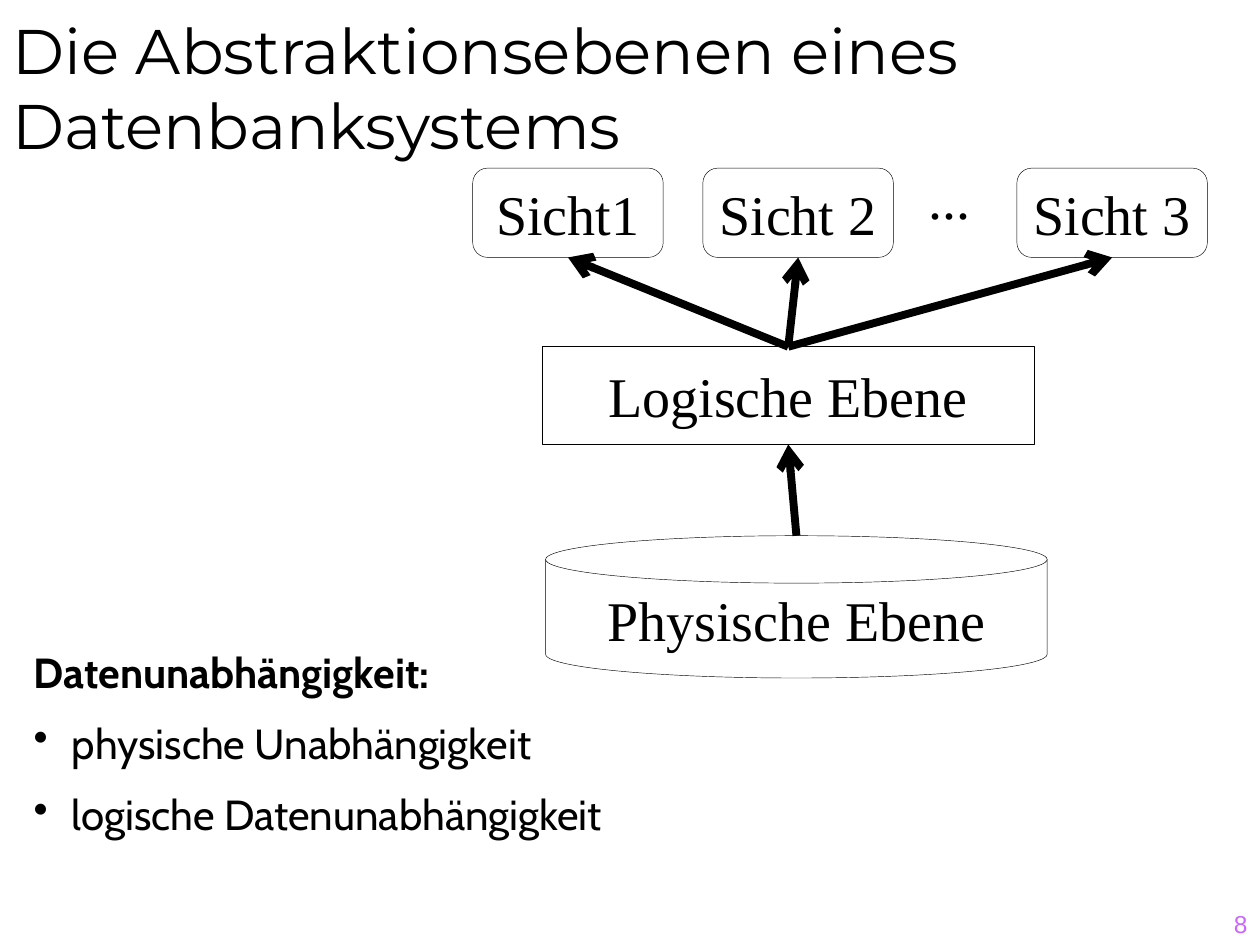
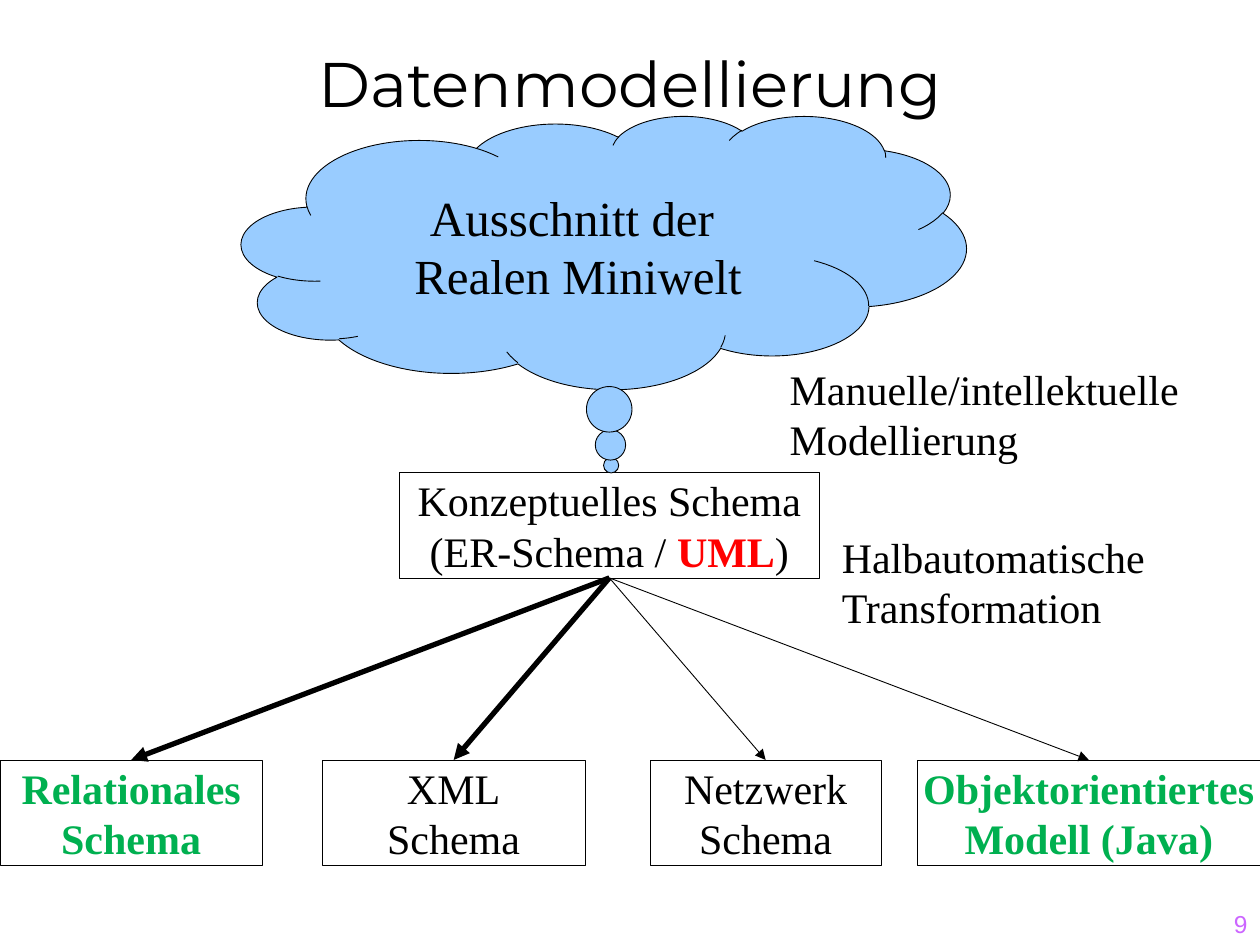
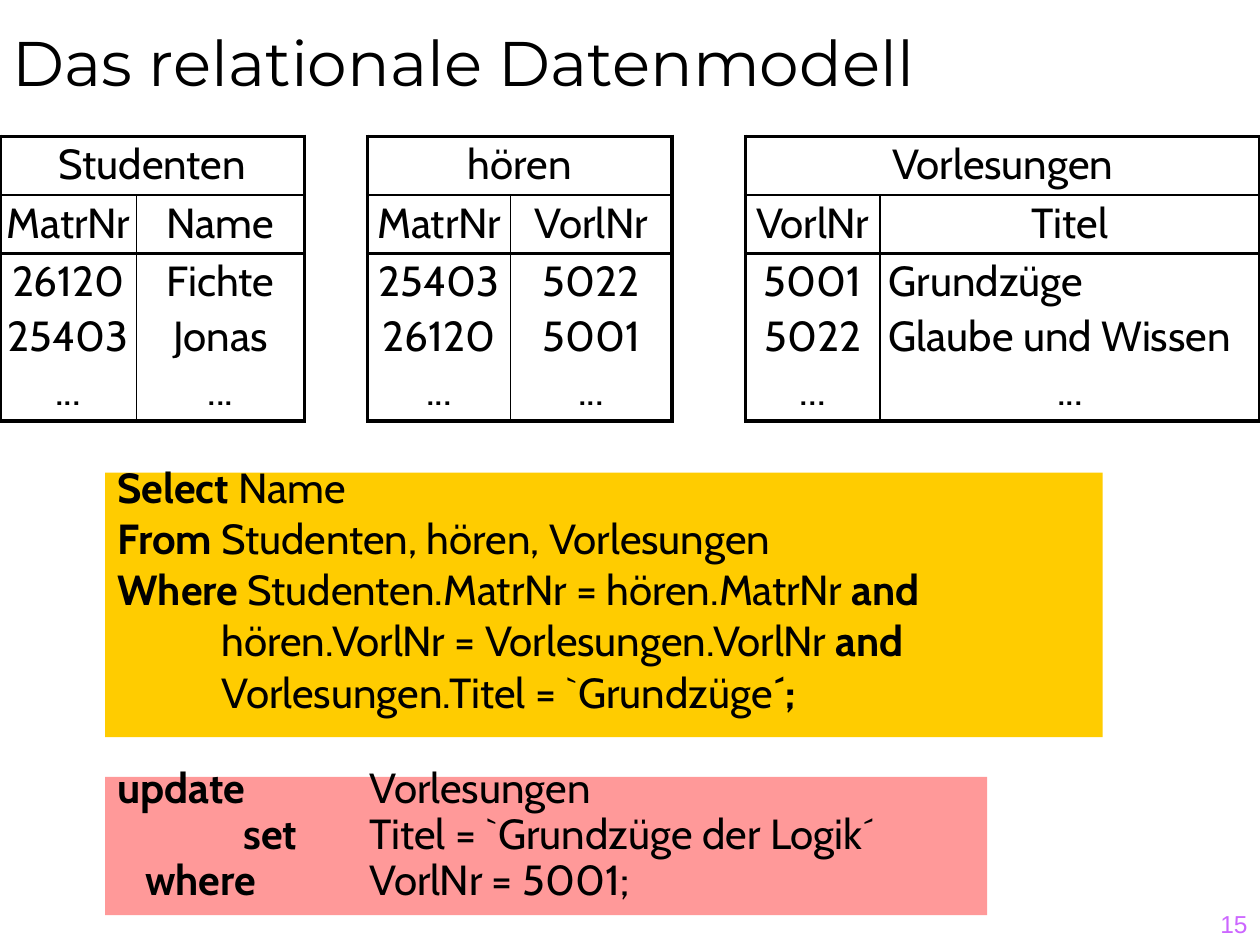
from lxml.etree import SubElement
from pptx import Presentation
from pptx.dml.color import RGBColor
from pptx.enum.shapes import MSO_CONNECTOR, MSO_SHAPE
from pptx.enum.text import MSO_ANCHOR, PP_ALIGN
from pptx.oxml.ns import qn
from pptx.util import Cm, Pt

COLORS = {
    "text": "000000",
    "page_number": "CC66FF",
    "highlight": "FF0000",
    "covered": "00B050",
    "cloud": "99CCFF",
    "query": "FFCC00",
    "update": "FF9999",
}
TITLE_FONT, BODY_FONT, DIAGRAM_FONT, NUMBER_FONT = "Montserrat", "Cabin", "Times New Roman", "Arial"
ALIGNMENTS = {"l": PP_ALIGN.LEFT, "c": PP_ALIGN.CENTER, "r": PP_ALIGN.RIGHT}
SLIDE_WIDTH, SLIDE_HEIGHT = 25.4, 19.05
THIN, THICK = 1, 2.25
ROW_HEIGHTS = (1.18, 1.18, 3.38)
BULLET_INDENT = 0.77


def color_of(name):
    """Return the named colour."""
    return RGBColor.from_string(COLORS[name])


def add_bullet(paragraph):
    """Give a paragraph a hanging bullet."""
    properties = paragraph._p.get_or_add_pPr()
    properties.set("marL", str(Cm(BULLET_INDENT)))
    properties.set("indent", str(-Cm(BULLET_INDENT)))
    SubElement(properties, qn("a:buChar"), char="•")


def add_tab_stops(paragraph, stops):
    """Add left tab stops at the given distances."""
    tab_list = SubElement(paragraph._p.get_or_add_pPr(), qn("a:tabLst"))
    for stop in stops:
        SubElement(tab_list, qn("a:tab"), pos=str(Cm(stop)), algn="l")


def write_text(frame, text, font=DIAGRAM_FONT, size=24, color="text", accent="text", align="l",
               anchor=MSO_ANCHOR.TOP, wrap=True, space_before=0, line_spacing=None,
               tabs=(), bullets_from=None):
    """Fill a frame; ** toggles bold accent, align has a letter per paragraph, the last repeating."""
    frame.word_wrap = wrap
    frame.vertical_anchor = anchor
    for index, line in enumerate(text.split("\n")):
        paragraph = frame.add_paragraph() if index else frame.paragraphs[0]
        paragraph.alignment = ALIGNMENTS[align[min(index, len(align) - 1)]]
        paragraph.space_before = Pt(space_before)
        if line_spacing:
            paragraph.line_spacing = line_spacing
        if bullets_from is not None and index >= bullets_from:
            add_bullet(paragraph)
        if index < len(tabs) and tabs[index]:
            add_tab_stops(paragraph, tabs[index])
        for position, part in enumerate(line.split("**")):
            if part:
                bold = position % 2 == 1
                run = paragraph.add_run()
                run.text = part
                run.font.name = font
                run.font.size = Pt(size)
                run.font.bold = bold
                run.font.color.rgb = color_of(accent if bold else color)


def add_text(slide, box, text, **text_format):
    """Add a text box at left, top, width, height."""
    text_box = slide.shapes.add_textbox(*map(Cm, box))
    write_text(text_box.text_frame, text, **text_format)


def add_box(slide, kind, box, text, fill=None, line_width=0.25, **text_format):
    """Add a preset shape with text and return it."""
    shape = slide.shapes.add_shape(kind, *map(Cm, box))
    shape.shadow.inherit = False
    if fill:
        shape.fill.solid()
        shape.fill.fore_color.rgb = color_of(fill)
    else:
        shape.fill.background()
    if line_width:
        shape.line.width = Pt(line_width)
        shape.line.color.rgb = color_of("text")
    else:
        shape.line.fill.background()
    write_text(shape.text_frame, text, **text_format)
    return shape


def add_node(slide, kind, box, text, **options):
    """Add an outlined diagram node with centred text and return it."""
    options = {"align": "c", "anchor": MSO_ANCHOR.MIDDLE, "wrap": False} | options
    return add_box(slide, kind, box, text, **options)


def add_arrow(slide, start, end, width, head):
    """Draw an arrow between two points."""
    connector = slide.shapes.add_connector(MSO_CONNECTOR.STRAIGHT, *start, *end)
    connector.line.width = Pt(width)
    connector.line.color.rgb = color_of("text")
    SubElement(connector.line._get_or_add_ln(), qn("a:tailEnd"), type=head)
    SubElement(connector._element.spPr, qn("a:effectLst"))


def top_of(shape):
    """Return the middle of the top edge."""
    return shape.left + shape.width // 2, shape.top


def bottom_of(shape):
    """Return the middle of the bottom edge."""
    return shape.left + shape.width // 2, shape.top + shape.height


def set_borders(cell, **widths):
    """Set the left, right, top and bottom border widths in points."""
    properties = cell._tc.get_or_add_tcPr()
    for side in ("L", "R", "T", "B"):
        line = SubElement(properties, qn(f"a:ln{side}"), w=str(Pt(widths[side])))
        fill = SubElement(line, qn("a:solidFill"))
        SubElement(fill, qn("a:srgbClr"), val=COLORS["text"])


def add_relation(slide, left, column_widths, name, attributes, values, last_align="c"):
    """Add a table with a relation's name, attributes and values."""
    table = slide.shapes.add_table(3, 2, Cm(left), Cm(2.75), Cm(sum(column_widths)),
                                   Cm(sum(ROW_HEIGHTS))).table
    table.first_row = table.horz_banding = False
    for column, width in zip(table.columns, column_widths):
        column.width = Cm(width)
    for row, height in zip(table.rows, ROW_HEIGHTS):
        row.height = Cm(height)
    table.cell(0, 0).merge(table.cell(0, 1))
    for row, texts in enumerate(((name, ""), attributes, values)):
        for column, text in enumerate(texts):
            cell = table.cell(row, column)
            side_margin = 0.18 if row == 2 and column == 1 else 0
            cell.margin_left = cell.margin_right = Cm(side_margin)
            cell.margin_top = cell.margin_bottom = Cm(0.13)
            set_borders(cell,
                        L=THIN if column and row else THICK,
                        R=THICK if column or not row else THIN,
                        T=THIN if row == 1 else THICK,
                        B=THICK if row else THIN)
            cell.fill.background()
            write_text(cell.text_frame, text, font=BODY_FONT, space_before=4.8, line_spacing=0.9,
                       align=last_align if side_margin else "c")


def add_page(presentation, title, number, title_top, title_height, align="l"):
    """Add a blank slide with its title and page number."""
    slide = presentation.slides.add_slide(presentation.slide_layouts[6])
    add_text(slide, (20.12, 17.78, 5.28, 1.27), str(number), font=NUMBER_FONT, size=14,
             color="page_number", align="r", anchor=MSO_ANCHOR.BOTTOM)
    add_text(slide, (0, title_top, SLIDE_WIDTH, title_height), title, font=TITLE_FONT, size=36,
             align=align, anchor=MSO_ANCHOR.BOTTOM)
    return slide


def build_levels(presentation):
    """Build the slide on the levels of abstraction."""
    slide = add_page(presentation, "Die Abstraktionsebenen eines Datenbanksystems", 8, 1.7, 1.7)
    add_text(slide, (0.43, 12.9, 12.5, 4.32),
             "**Datenunabhängigkeit:**\nphysische Unabhängigkeit\nlogische Datenunabhängigkeit",
             font=BODY_FONT, space_before=12, bullets_from=1)
    physical = add_node(slide, MSO_SHAPE.FLOWCHART_MAGNETIC_DISK, (11, 10.8, 10.11, 2.87),
                        "Physische Ebene", size=32)
    logical = add_node(slide, MSO_SHAPE.FLOWCHART_PROCESS, (10.94, 6.99, 9.9, 1.97),
                       "Logische Ebene", size=32)
    views = [add_node(slide, MSO_SHAPE.FLOWCHART_ALTERNATE_PROCESS, (left, 3.39, 3.84, 1.8),
                      text, size=32)
             for left, text in ((9.53, "Sicht1"), (14.17, "Sicht 2"), (20.5, "Sicht 3"))]
    add_arrow(slide, top_of(physical), bottom_of(logical), 4.5, "arrow")
    for view in views:
        add_arrow(slide, top_of(logical), bottom_of(view), 4.5, "arrow")
    add_text(slide, (17.98, 3.18, 2.34, 1.6), "...", size=32, align="c")


def build_modelling(presentation):
    """Build the slide on data modelling."""
    slide = add_page(presentation, "Datenmodellierung", 9, 0, 2.54, align="c")
    concept = add_node(slide, MSO_SHAPE.RECTANGLE, (8.05, 9.53, 8.47, 2.12),
                       "Konzeptuelles Schema\n(ER-Schema / **UML**)", accent="highlight")
    add_text(slide, (15.67, 7.2, 9.31, 2.29), "Manuelle/intellektuelle Modellierung")
    add_text(slide, (16.72, 10.58, 8.89, 2.29), "Halbautomatische\nTransformation")
    schemas = (
        (0, 5.29, "**Relationales**\n**Schema**", 3),
        (6.5, 5.29, "XML\nSchema", 3),
        (13.11, 4.65, "Netzwerk\nSchema", 0.5),
        (18.5, 6.9, "**Objektorientiertes**\n**Modell (Java)**", 0.5),
    )
    for left, width, text, arrow_width in schemas:
        schema = add_node(slide, MSO_SHAPE.RECTANGLE, (left, 15.32, width, 2.12), text,
                          accent="covered")
        add_arrow(slide, bottom_of(concept), top_of(schema), arrow_width, "triangle")
    cloud = add_node(slide, MSO_SHAPE.CLOUD_CALLOUT, (4.87, 2.33, 14.61, 5.51),
                     "Ausschnitt der \nRealen Miniwelt", fill="cloud", line_width=0.5,
                     size=28, wrap=True)
    cloud.adjustments[0], cloud.adjustments[1] = 0.01, 0.78


def build_relational(presentation):
    """Build the slide on the relational model."""
    slide = add_page(presentation, "Das relationale Datenmodell", 15, -1.06, 3.18)
    add_relation(slide, 0, (2.75, 3.39), "Studenten", ("MatrNr", "Name"),
                 ("26120\n25403\n...", "Fichte\nJonas\n..."))
    add_relation(slide, 7.41, (2.88, 3.26), "hören", ("MatrNr", "VorlNr"),
                 ("25403\n26120\n...", "5022\n5001\n..."))
    add_relation(slide, 15.03, (2.71, 7.66), "Vorlesungen", ("VorlNr", "Titel"),
                 ("5001\n5022\n...", "Grundzüge\nGlaube und Wissen\n..."), last_align="llc")
    query = (
        "**Select** Name",
        "**From** Studenten, hören, Vorlesungen",
        "**Where** Studenten.MatrNr = hören.MatrNr **and**",
        "\thören.VorlNr = Vorlesungen.VorlNr **and**",
        "\tVorlesungen.Titel = `Grundzüge**´;**",
    )
    update = (
        "**update**\tVorlesungen",
        "\t**set**\tTitel = `Grundzüge der Logik´",
        "\t**where**\tVorlNr = 5001;",
    )
    statements = (
        (query, (2.12, 9.53, 20.11, 5.33), "query", 0.6, ((), (), (), (2.1,), (2.1,))),
        (update, (2.12, 15.66, 17.78, 2.79), "update", 0.5, ((5.08,), (2.54, 5.08), (0.56, 5.08))),
    )
    for lines, box, fill, line_spacing, tabs in statements:
        add_box(slide, MSO_SHAPE.RECTANGLE, box, "\n".join(lines), fill=fill, line_width=0,
                font=BODY_FONT, space_before=12, line_spacing=line_spacing, tabs=tabs)


def main():
    """Build and save the presentation."""
    presentation = Presentation()
    presentation.slide_width, presentation.slide_height = Cm(SLIDE_WIDTH), Cm(SLIDE_HEIGHT)
    build_levels(presentation)
    build_modelling(presentation)
    build_relational(presentation)
    presentation.save("out.pptx")


if __name__ == "__main__":
    main()
